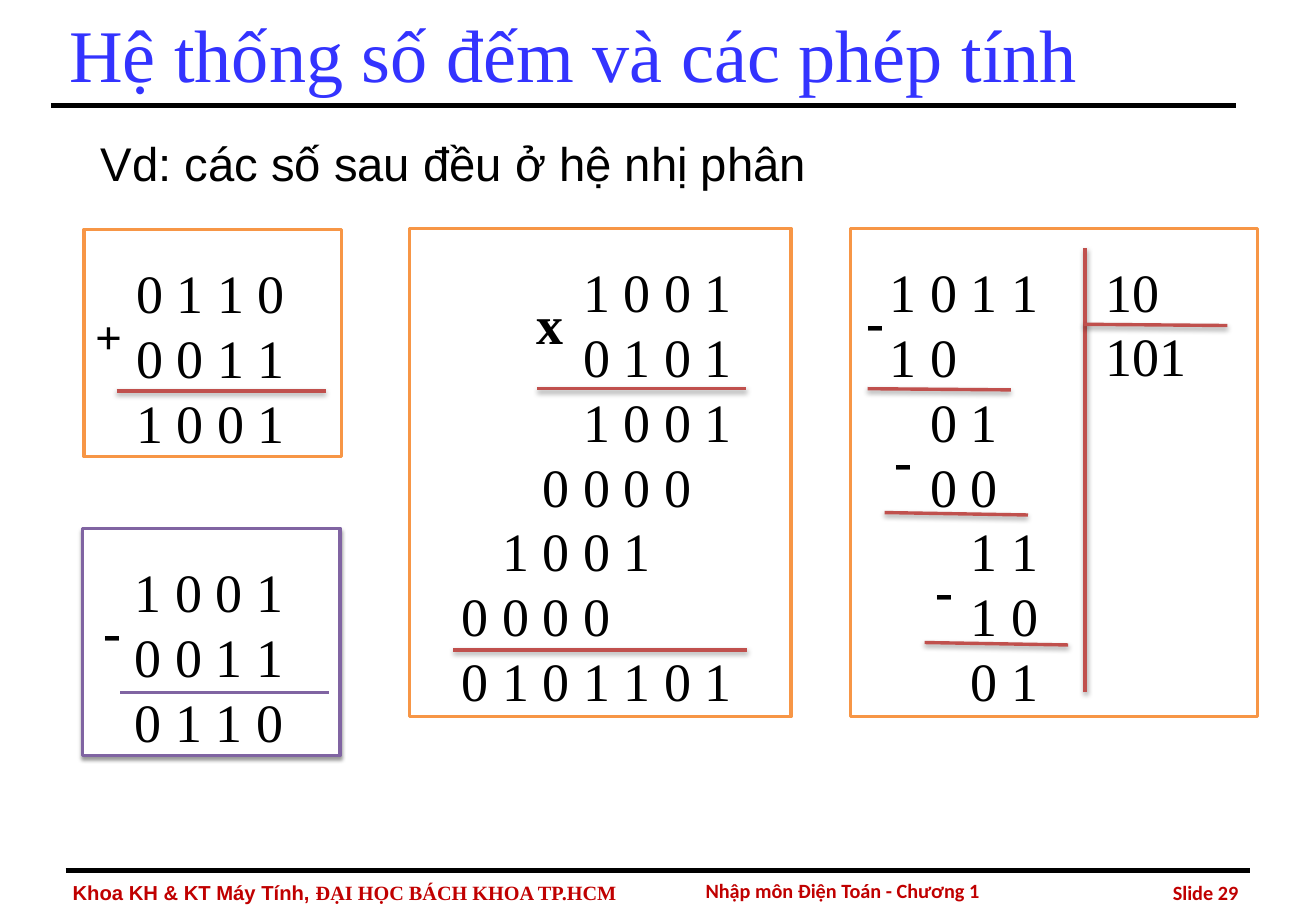
from dataclasses import dataclass
from typing import Optional

from lxml.etree import SubElement
from pptx import Presentation
from pptx.dml.color import RGBColor
from pptx.enum.shapes import MSO_CONNECTOR, MSO_SHAPE
from pptx.enum.text import MSO_ANCHOR, PP_ALIGN
from pptx.oxml.ns import qn
from pptx.util import Inches, Pt


@dataclass(frozen=True)
class Theme:
    black: str = "000000"
    white: str = "FFFFFF"
    title_blue: str = "3333FF"
    footer_red: str = "C00000"
    orange: str = "F79646"
    purple: str = "8064A2"
    rule_red: str = "C0504D"
    serif: str = "Times New Roman"
    sans: str = "Arial"
    footer_font: str = "Calibri"
    title_size: int = 44
    digit_size: int = 32
    body_size: int = 28
    footer_size: int = 12
    digit_step: int = 24


@dataclass(frozen=True)
class Shadow:
    opacity: int
    blur: float
    distance: float


@dataclass(frozen=True)
class Rule:
    start: tuple[float, float]
    end: tuple[float, float]
    color: str
    width: float = 2
    shadow: Optional[Shadow] = None


@dataclass(frozen=True)
class Label:
    text: str
    left: float
    top: float
    width: float = 0.36
    height: float = 0.64
    size: int = 32
    fill: Optional[str] = None
    bold: bool = True


@dataclass(frozen=True)
class Calculation:
    box: tuple[float, float, float, float]
    color: str
    inset: float
    rows: list[tuple[int, str]]
    rules: list[Rule]
    labels: list[Label]
    shadow: Optional[Shadow] = None


THEME = Theme()
RULE_SHADOW = Shadow(38, 3.1, 1.6)
BOX_SHADOW = Shadow(40, 2, 2)


def red_rule(x1: float, y1: float, x2: float, y2: float) -> Rule:
    return Rule((x1, y1), (x2, y2), THEME.rule_red, shadow=RULE_SHADOW)


CALCULATIONS = [
    Calculation(
        (3.37, 1.88, 3.14, 4.02), THEME.orange, 0.43,
        [(3, "1 0 0 1"), (3, "0 1 0 1"), (3, "1 0 0 1"), (2, "0 0 0 0"),
         (1, "1 0 0 1"), (0, "0 0 0 0"), (0, "0 1 0 1 1 0 1")],
        [red_rule(4.42, 3.2, 6.14, 3.2), red_rule(3.73, 5.35, 6.15, 5.35)],
        [Label("x", 4.32, 2.34)],
    ),
    Calculation(
        (0.69, 1.89, 2.12, 1.87), THEME.orange, 0.43,
        [(0, "0 1 1 0"), (0, "0 0 1 1"), (0, "1 0 0 1")],
        [red_rule(0.96, 3.22, 2.68, 3.22)],
        [Label("+", 0.69, 2.48, 0.52, 0.57, THEME.body_size)],
    ),
    Calculation(
        (0.68, 4.35, 2.12, 1.87), THEME.purple, 0.43,
        [(0, "1 0 0 1"), (0, "0 0 1 1"), (0, "0 1 1 0")],
        [Rule((0.99, 5.7), (2.71, 5.7), THEME.purple)],
        [Label("-", 0.75, 4.87, fill=THEME.white)],
        BOX_SHADOW,
    ),
    Calculation(
        (7, 1.88, 3.35, 4.02), THEME.orange, 0.32,
        [(0, "1 0 1 1"), (0, "1 0"), (1, "0 1"), (1, "0 0"),
         (2, "1 1"), (2, "1 0"), (2, "0 1")],
        [red_rule(8.93, 5.7, 8.93, 2.04), red_rule(8.92, 2.67, 10.1, 2.68),
         red_rule(7.14, 3.2, 8.32, 3.21), red_rule(7.28, 4.22, 8.46, 4.24),
         red_rule(7.61, 5.29, 8.79, 5.31)],
        [Label("-", 7.03, 2.32), Label("-", 7.26, 3.46), Label("-", 7.6, 4.53),
         Label("10", 9, 2.08, 1.2, bold=False),
         Label("101", 9, 2.61, 1.2, bold=False)],
    ),
]


def set_shadow(shape, shadow: Optional[Shadow]) -> None:
    effects = SubElement(shape._element.spPr, qn("a:effectLst"))
    if shadow:
        outer = SubElement(
            effects, qn("a:outerShdw"), blurRad=str(Pt(shadow.blur)),
            dist=str(Pt(shadow.distance)), dir="5400000", rotWithShape="0")
        color = SubElement(outer, qn("a:srgbClr"), val=THEME.black)
        SubElement(color, qn("a:alpha"), val=str(shadow.opacity * 1000))


def add_run(paragraph, text: str, *, font: str, size: int,
            color: str = THEME.black, bold: bool = False) -> None:
    run = paragraph.add_run()
    run.text = text
    run.font.name = font
    run.font.size = Pt(size)
    run.font.bold = bold
    run.font.color.rgb = RGBColor.from_string(color)


def add_text(slide, text: str, box: tuple[float, float, float, float], *,
             anchor=MSO_ANCHOR.TOP, align=PP_ALIGN.LEFT,
             fill: Optional[str] = None, **run_format):
    shape = slide.shapes.add_textbox(*map(Inches, box))
    if fill:
        shape.fill.solid()
        shape.fill.fore_color.rgb = RGBColor.from_string(fill)
    frame = shape.text_frame
    frame.word_wrap = True
    frame.vertical_anchor = anchor
    paragraph = frame.paragraphs[0]
    paragraph.alignment = align
    add_run(paragraph, text, **run_format)
    return paragraph


def add_rule(slide, rule: Rule) -> None:
    connector = slide.shapes.add_connector(
        MSO_CONNECTOR.STRAIGHT, *map(Inches, rule.start + rule.end))
    connector.line.color.rgb = RGBColor.from_string(rule.color)
    connector.line.width = Pt(rule.width)
    set_shadow(connector, rule.shadow)


def add_calculation(slide, calculation: Calculation) -> None:
    shape = slide.shapes.add_shape(MSO_SHAPE.RECTANGLE, *map(Inches, calculation.box))
    shape.fill.solid()
    shape.fill.fore_color.rgb = RGBColor.from_string(THEME.white)
    shape.line.color.rgb = RGBColor.from_string(calculation.color)
    shape.line.width = Pt(2)
    set_shadow(shape, calculation.shadow)
    frame = shape.text_frame
    frame.word_wrap = True
    frame.vertical_anchor = MSO_ANCHOR.TOP
    frame.margin_left = Inches(calculation.inset)
    frame.margin_top = Inches(0.25)
    frame.margin_right = frame.margin_bottom = 0
    for index, (steps, digits) in enumerate(calculation.rows):
        paragraph = frame.add_paragraph() if index else frame.paragraphs[0]
        paragraph.alignment = PP_ALIGN.LEFT
        properties = paragraph._p.get_or_add_pPr()
        properties.set("marL", str(Pt(steps * THEME.digit_step)))
        properties.set("indent", "0")
        add_run(paragraph, digits, font=THEME.serif, size=THEME.digit_size)
    for rule in calculation.rules:
        add_rule(slide, rule)
    for label in calculation.labels:
        add_text(slide, label.text, (label.left, label.top, label.width, label.height),
                 font=THEME.serif, size=label.size, bold=label.bold, fill=label.fill)


def main() -> None:
    presentation = Presentation()
    presentation.slide_width = Inches(10.83)
    presentation.slide_height = Inches(7.5)
    slide = presentation.slides.add_slide(presentation.slide_layouts[6])
    add_rule(slide, Rule((0.54, 7.17), (10.29, 7.17), THEME.black, 3))
    add_rule(slide, Rule((0.42, 0.87), (10.17, 0.87), THEME.black, 3))
    add_text(slide, "Hệ thống số đếm và các phép tính", (0.47, 0, 9.75, 0.87),
             anchor=MSO_ANCHOR.MIDDLE, font=THEME.serif, size=THEME.title_size,
             color=THEME.title_blue)
    add_text(slide, "Vd: các số sau đều ở hệ nhị phân", (0.73, 1.06, 9.61, 0.57),
             font=THEME.sans, size=THEME.body_size)
    for calculation in CALCULATIONS:
        add_calculation(slide, calculation)
    footer = dict(size=THEME.footer_size, color=THEME.footer_red, bold=True)
    faculty = add_text(slide, "Khoa KH & KT Máy Tính, ", (0.5, 7.2, 5.57, 0.3),
                       anchor=MSO_ANCHOR.MIDDLE, font=THEME.sans, **footer)
    add_run(faculty, "ĐẠI HỌC BÁCH KHOA TP.HCM", font=THEME.serif, **footer)
    add_text(slide, "Nhập môn Điện Toán - Chương 1", (5.22, 7.16, 3.43, 0.34),
             anchor=MSO_ANCHOR.MIDDLE, align=PP_ALIGN.CENTER,
             font=THEME.footer_font, **footer)
    add_text(slide, "Slide 29", (8.89, 7.19, 1.4, 0.31),
             anchor=MSO_ANCHOR.MIDDLE, align=PP_ALIGN.RIGHT,
             font=THEME.footer_font, **footer)
    presentation.save("out.pptx")


if __name__ == "__main__":
    main()
